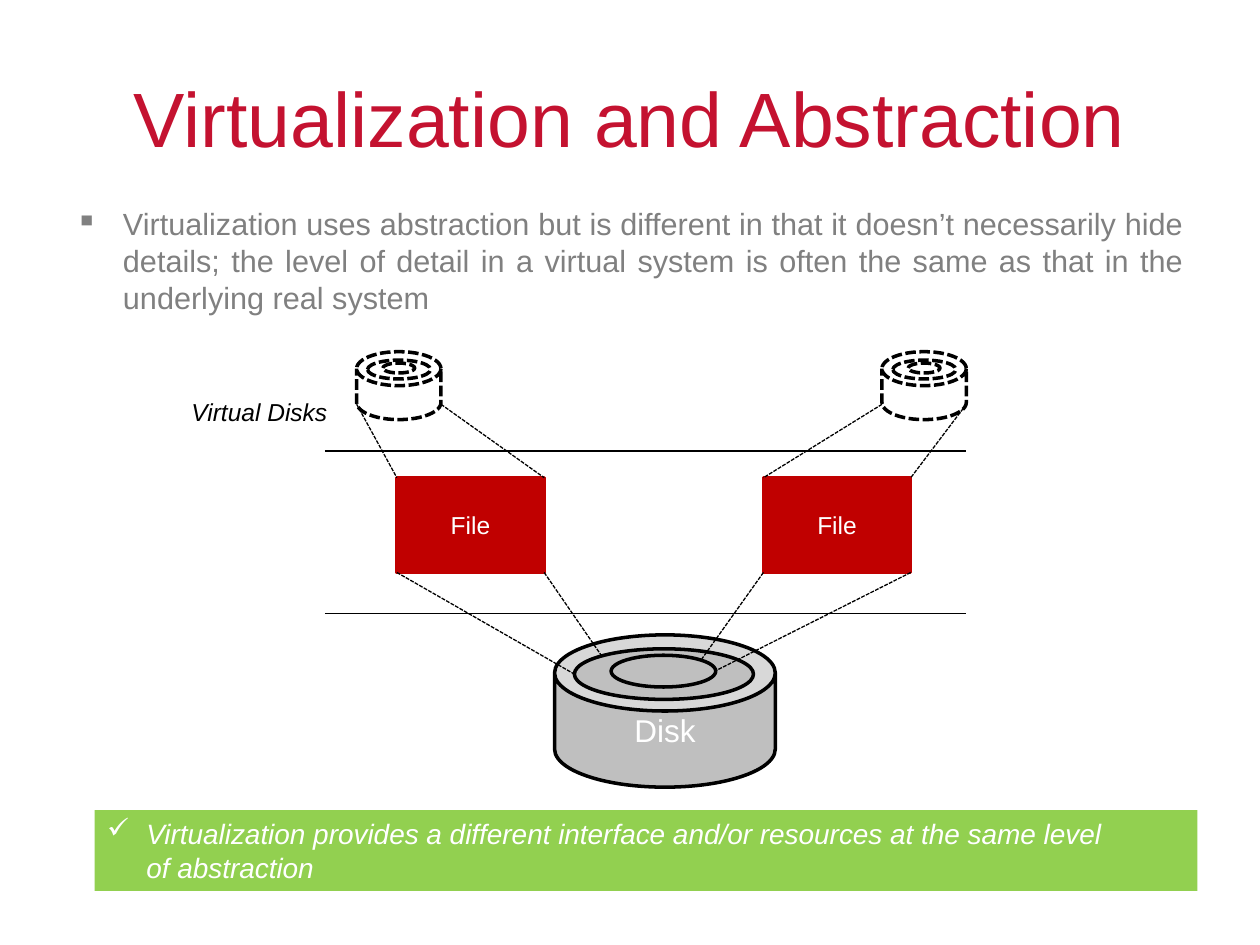
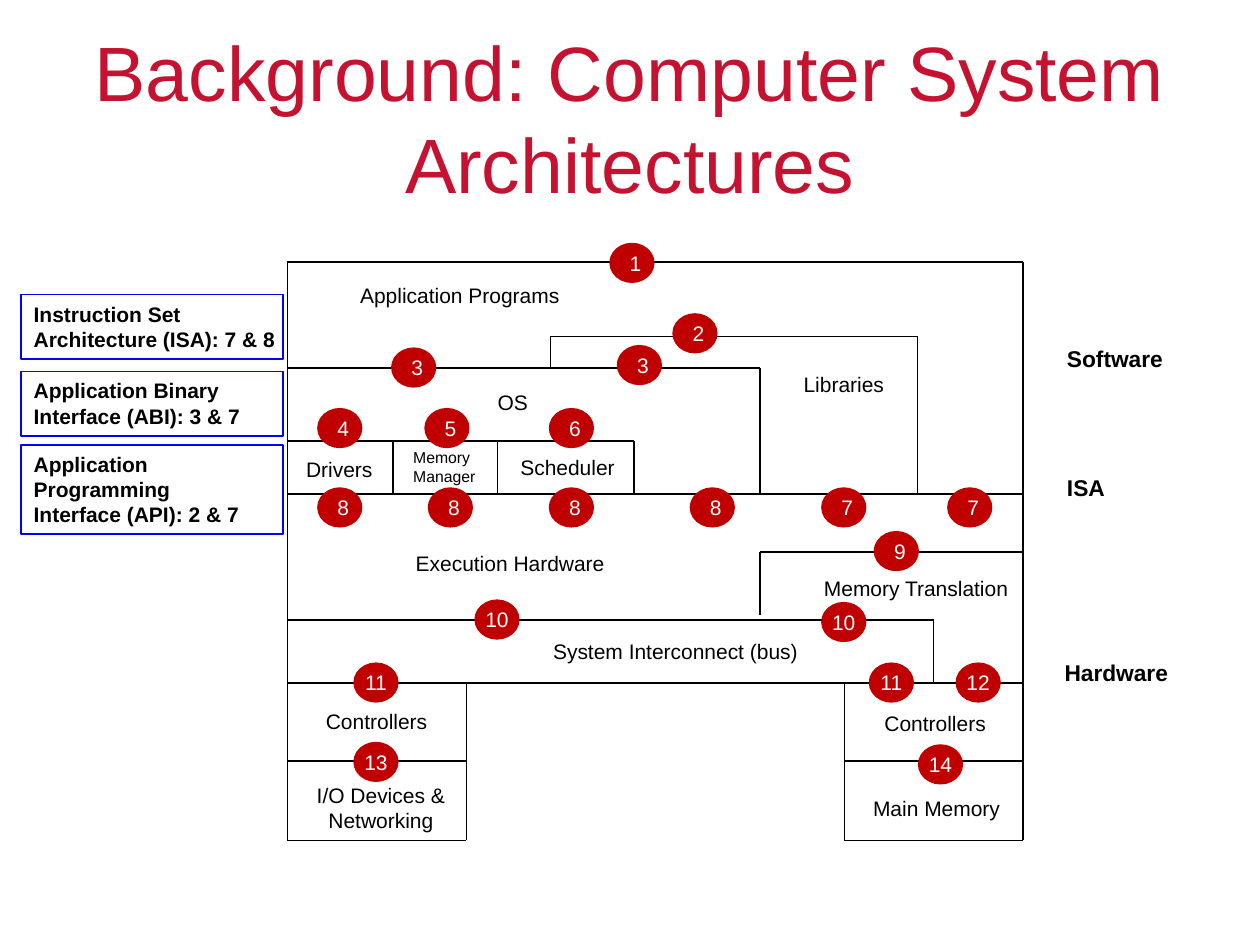
from lxml import etree
from pptx import Presentation
from pptx.dml.color import RGBColor
from pptx.enum.dml import MSO_LINE
from pptx.enum.shapes import MSO_CONNECTOR, MSO_SHAPE
from pptx.enum.text import MSO_ANCHOR, PP_ALIGN
from pptx.oxml.ns import qn
from pptx.util import Cm, Pt

RECTANGLE, ELLIPSE, CAN = MSO_SHAPE.RECTANGLE, MSO_SHAPE.OVAL, MSO_SHAPE.CAN
STRAIGHT = MSO_CONNECTOR.STRAIGHT
DASHED = MSO_LINE.SQUARE_DOT
LEFT, CENTER, JUSTIFY = PP_ALIGN.LEFT, PP_ALIGN.CENTER, PP_ALIGN.JUSTIFY
TOP, MIDDLE = MSO_ANCHOR.TOP, MSO_ANCHOR.MIDDLE

FONT = "Arial"
TITLE_RED = RGBColor(0xC4, 0x12, 0x30)
BOX_RED = RGBColor(0xC0, 0x00, 0x00)
BODY_GRAY = RGBColor(0x80, 0x80, 0x80)
DISK_GRAY = RGBColor(0xBF, 0xBF, 0xBF)
GREEN = RGBColor(0x92, 0xD0, 0x50)
BLUE = RGBColor(0x00, 0x00, 0xFF)
BLACK = RGBColor(0x00, 0x00, 0x00)
WHITE = RGBColor(0xFF, 0xFF, 0xFF)

TITLE_AREA = (1.27, 0.76, 22.86, 3.18)


def add_box(slide, area, lines=(), kind=None, fill=None, line=None, width=2, dash=None,
            size=12, color=BLACK, bold=False, italic=False, align=LEFT, anchor=TOP,
            insets=(0.25, 0.13, 0.25, 0.13), wrap=True, bullet=None, indent=0):
    """Add a preset shape, or a text box if kind is None; area and insets are in cm."""
    position = [Cm(value) for value in area]
    if kind is None:
        shape = slide.shapes.add_textbox(*position)
    else:
        shape = slide.shapes.add_shape(kind, *position)
        shape.shadow.inherit = False
        if fill is None:
            shape.fill.background()
        else:
            shape.fill.solid()
            shape.fill.fore_color.rgb = fill
        if line is None:
            shape.line.fill.background()
        else:
            shape.line.color.rgb = line
            shape.line.width = Pt(width)
            if dash is not None:
                shape.line.dash_style = dash
        if kind == CAN:
            shape.adjustments[0] = 0.5
    frame = shape.text_frame
    frame.word_wrap = wrap
    frame.vertical_anchor = anchor
    (frame.margin_left, frame.margin_top,
     frame.margin_right, frame.margin_bottom) = [Cm(value) for value in insets]
    for index, text in enumerate(lines):
        paragraph = frame.paragraphs[0] if index == 0 else frame.add_paragraph()
        paragraph.alignment = align
        if bullet:
            properties = paragraph._p.get_or_add_pPr()
            properties.set("marL", str(Cm(indent)))
            properties.set("indent", str(-Cm(indent)))
            etree.SubElement(properties, qn("a:buChar")).set("char", bullet)
        for part_index, part in enumerate(text.split("\n")):
            if part_index:
                paragraph.add_line_break()
            run = paragraph.add_run()
            run.text = part
            run.font.name = FONT
            run.font.size = Pt(size)
            run.font.color.rgb = color
            run.font.bold = bold
            run.font.italic = italic
    return shape


def add_line(slide, x1, y1, x2, y2, width=0.75, dash=None):
    connector = slide.shapes.add_connector(STRAIGHT, Cm(x1), Cm(y1), Cm(x2), Cm(y2))
    connector.line.color.rgb = BLACK
    connector.line.width = Pt(width)
    if dash is not None:
        connector.line.dash_style = dash
    etree.SubElement(connector._element.spPr, qn("a:effectLst"))


presentation = Presentation()
presentation.slide_width = Cm(25.4)
presentation.slide_height = Cm(19.05)
slides = []
for title in ("Virtualization and Abstraction", "Background: Computer System Architectures"):
    slide = presentation.slides.add_slide(presentation.slide_layouts[6])
    add_box(slide, TITLE_AREA, [title], size=44, color=TITLE_RED, align=CENTER, anchor=MIDDLE)
    slides.append(slide)
virtualization, architecture = slides

# Virtualization: files on a real disk presented as virtual disks
add_box(virtualization, (1.27, 4.01, 22.86, 2.54),
        ["Virtualization uses abstraction but is different in that it doesn’t necessarily hide "
         "details; the level of detail in a virtual system is often the same as that in the "
         "underlying real system"],
        size=17.5, color=BODY_GRAY, align=JUSTIFY, bullet="▪", indent=0.96)

FILE_TOP, FILE_HEIGHT, FILE_WIDTH = 9.63, 1.91, 2.97
FILE_LEFTS = (8.0, 15.39)
FILE_BOTTOM = FILE_TOP + FILE_HEIGHT
for left in FILE_LEFTS:
    add_box(virtualization, (left, FILE_TOP, FILE_WIDTH, FILE_HEIGHT), ["File"], RECTANGLE,
            BOX_RED, BOX_RED, size=14, color=WHITE, align=CENTER, anchor=MIDDLE)
for y in (9.09, 12.37):
    add_line(virtualization, 6.55, y, 19.48, y, width=1)

add_box(virtualization, (11.18, 12.8, 4.45, 3.07), ["Disk"], CAN, DISK_GRAY, BLACK,
        size=18, color=WHITE, align=CENTER, anchor=MIDDLE)
for ring in ((11.58, 13.08, 3.61, 1.02), (12.32, 13.21, 2.11, 0.64)):
    add_box(virtualization, ring, kind=ELLIPSE, fill=DISK_GRAY, line=BLACK)

VIRTUAL_WIDTH = 1.7
VIRTUAL_LEFTS = (7.19, 17.78)
for left in VIRTUAL_LEFTS:
    add_box(virtualization, (left, 7.09, VIRTUAL_WIDTH, 1.37), kind=CAN, line=BLACK, dash=DASHED)
    for offset, top, width, height in ((0.22, 7.26, 1.27, 0.38), (0.53, 7.32, 0.64, 0.2)):
        add_box(virtualization, (left + offset, top, width, height), kind=ELLIPSE,
                line=BLACK, dash=DASHED)

file_corners = [left + shift for left in FILE_LEFTS for shift in (0, FILE_WIDTH)]
virtual_corners = [left + shift for left in VIRTUAL_LEFTS for shift in (0, VIRTUAL_WIDTH)]
disk_points = ((11.58, 13.59), (12.12, 13.21), (14.15, 13.28), (14.45, 13.51))
for file_x, virtual_x, (disk_x, disk_y) in zip(file_corners, virtual_corners, disk_points):
    add_line(virtualization, virtual_x, 8.15, file_x, FILE_TOP, dash=DASHED)
    add_line(virtualization, file_x, FILE_BOTTOM, disk_x, disk_y, dash=DASHED)

add_box(virtualization, (3.61, 7.87, 3.28, 0.86), ["Virtual Disks"], size=14, italic=True,
        wrap=False)
add_box(virtualization, (1.91, 16.33, 22.23, 1.63),
        ["Virtualization provides a different interface and/or resources at the same level\n"
         "of abstraction"],
        RECTANGLE, GREEN, size=16, color=WHITE, italic=True, bullet="✓", indent=0.79)

# Architecture: layers, numbered interfaces, labels
X_LEFT, X_IO, X_MEMORY, X_RIGHT = 5.79, 9.4, 17.02, 20.62
X_OS, X_LIBRARIES, X_LIBRARY_START, X_SCHEDULER, X_BUS = 15.32, 18.49, 11.1, 12.78, 18.82
Y_TOP, Y_LIBRARIES, Y_OS, Y_DRIVERS, Y_ISA = 5.28, 6.78, 7.42, 8.89, 9.96
Y_TRANSLATION, Y_BUS, Y_CONTROLLERS, Y_DEVICES, Y_BOTTOM = 11.13, 12.5, 13.77, 15.34, 16.94

horizontal_lines = [
    (Y_TOP, X_LEFT, X_RIGHT), (Y_LIBRARIES, X_LIBRARY_START, X_LIBRARIES),
    (Y_OS, X_LEFT, X_OS), (Y_DRIVERS, X_LEFT, X_SCHEDULER), (Y_ISA, X_LEFT, X_RIGHT),
    (Y_TRANSLATION, X_OS, X_RIGHT), (Y_BUS, X_LEFT, X_BUS), (Y_CONTROLLERS, X_LEFT, X_RIGHT),
    (Y_DEVICES, X_LEFT, X_IO), (Y_DEVICES, X_MEMORY, X_RIGHT),
    (Y_BOTTOM, X_LEFT, X_IO), (Y_BOTTOM, X_MEMORY, X_RIGHT),
]
vertical_lines = [
    (X_LEFT, Y_TOP, Y_BOTTOM), (X_RIGHT, Y_TOP, Y_BOTTOM),
    (X_IO, Y_CONTROLLERS, Y_BOTTOM), (X_MEMORY, Y_CONTROLLERS, Y_BOTTOM),
    (X_BUS, Y_BUS, Y_CONTROLLERS), (X_OS, Y_TRANSLATION, 12.4), (X_OS, Y_OS, Y_ISA),
    (X_SCHEDULER, Y_DRIVERS, Y_ISA), (10.03, Y_DRIVERS, Y_ISA), (7.92, Y_DRIVERS, Y_ISA),
    (X_LIBRARY_START, Y_LIBRARIES, Y_OS), (X_LIBRARIES, Y_LIBRARIES, Y_ISA),
]
for y, start, end in horizontal_lines:
    add_line(architecture, start, y, end, y)
for x, start, end in vertical_lines:
    add_line(architecture, x, start, x, end)

badges = [
    (1, 12.32, 4.93), (2, 13.59, 6.35), (3, 7.92, 7.04), (3, 12.47, 6.99),
    (4, 6.43, 8.26), (5, 8.59, 8.26), (6, 11.1, 8.26),
    (7, 19.13, 9.86), (7, 16.59, 9.86),
    (8, 13.94, 9.86), (8, 11.1, 9.86), (8, 8.66, 9.86), (8, 6.43, 9.86),
    (9, 17.65, 10.74), (10, 9.6, 12.12), (10, 16.59, 12.17),
    (11, 7.16, 13.39), (11, 17.55, 13.39), (12, 19.3, 13.39),
    (13, 7.16, 14.99), (14, 18.54, 15.04),
]
for number, left, top in badges:
    insets = (0, 0, 0, 0) if number >= 10 else (0.25, 0.13, 0.25, 0.13)
    add_box(architecture, (left, top, 0.84, 0.74), [str(number)], ELLIPSE, BOX_RED, BOX_RED,
            color=WHITE, align=CENTER, anchor=MIDDLE, insets=insets)

layer_labels = [
    ("Drivers", 5.92, 9.07, 1.85), ("Application Programs", 7.01, 5.56, 4.57),
    ("Libraries", 15.95, 7.37, 2.13), ("OS", 9.78, 7.72, 1.14),
    ("Scheduler", 10.24, 9.04, 2.41), ("Execution Hardware", 8.13, 10.97, 4.34),
    ("System Interconnect (bus)", 10.9, 12.75, 5.49),
    ("Memory Translation", 16.36, 11.48, 4.27),
    ("Controllers", 6.32, 14.15, 2.57), ("Controllers", 17.58, 14.2, 2.57),
    ("Main Memory", 17.35, 15.9, 3.1),
]
for text, left, top, width in layer_labels:
    add_box(architecture, (left, top, width, 0.76), [text], wrap=False)
add_box(architecture, (8.33, 9.02, 1.27, 0.76), ["Memory", "Manager"], size=9,
        insets=(0, 0, 0, 0), wrap=False)
add_box(architecture, (6.12, 15.65, 3.12, 1.3), ["I/O Devices &", "Networking"],
        align=CENTER, wrap=False)

for text, left, top, width in (("Software", 21.26, 6.83, 2.46), ("ISA", 21.26, 9.42, 1.3),
                               ("Hardware", 21.21, 13.16, 2.62)):
    add_box(architecture, (left, top, width, 0.81), [text], size=13, bold=True, wrap=False)

interfaces = [
    (5.94, 1.3, ["Instruction Set", "Architecture (ISA): 7 & 8"]),
    (7.49, 1.3, ["Application Binary", "Interface (ABI): 3 & 7"]),
    (8.97, 1.8, ["Application Programming", "Interface (API): 2 & 7"]),
]
for top, height, lines in interfaces:
    add_box(architecture, (0.43, top, 5.28, height), lines, RECTANGLE, line=BLUE, width=1,
            bold=True, insets=(0.25, 0.13, 0, 0.13))

presentation.save("out.pptx")
